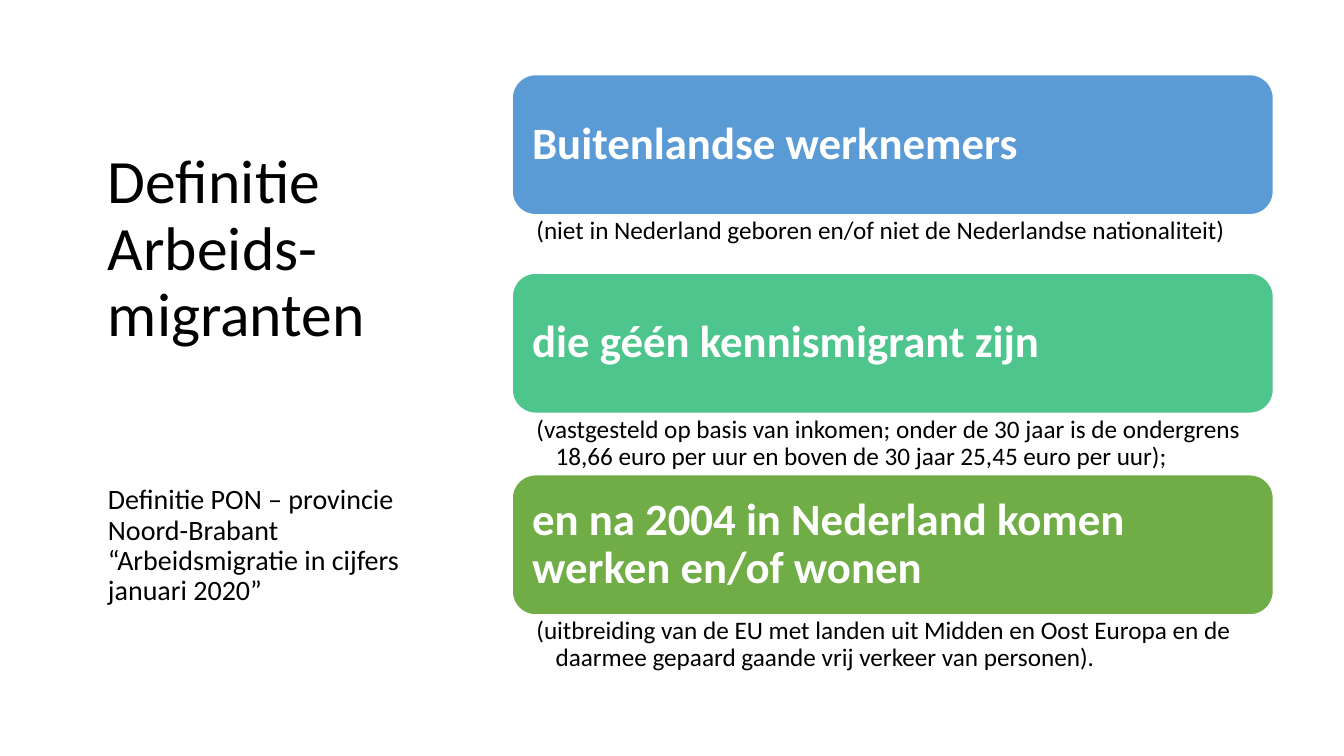
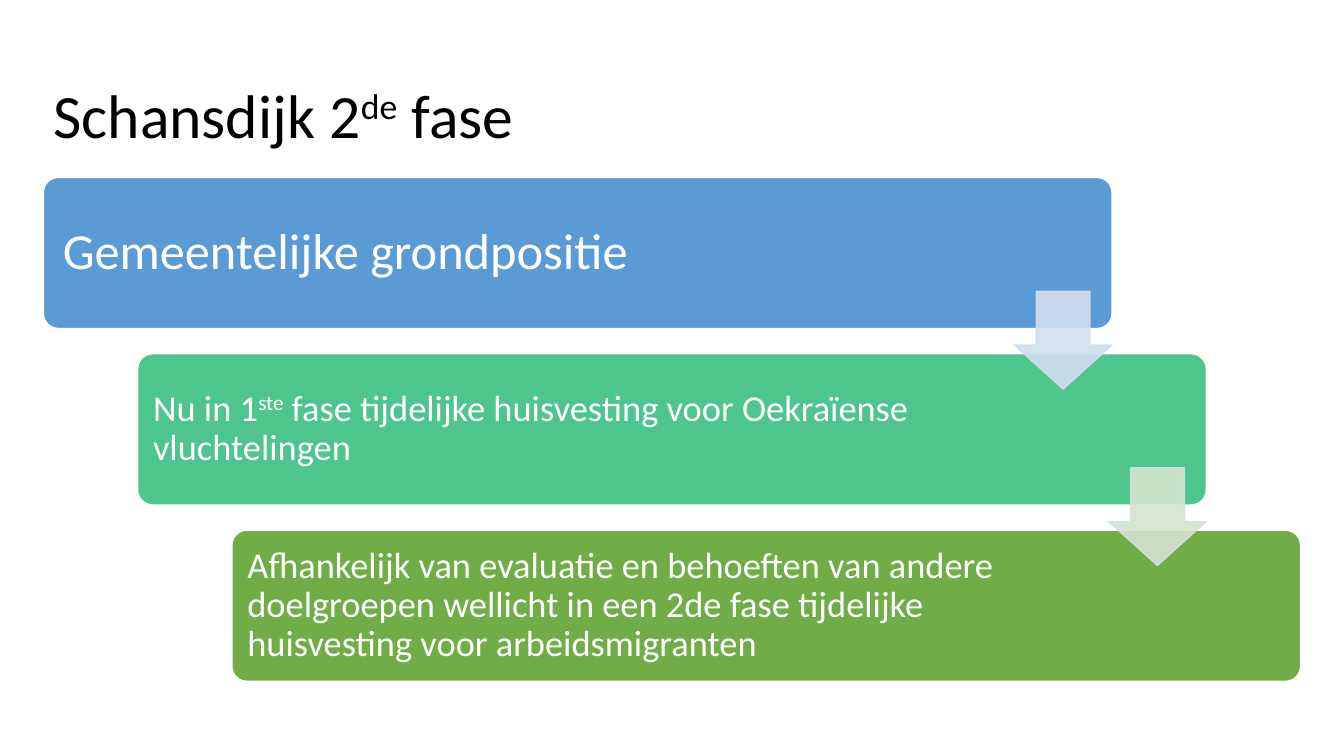
from lxml.etree import SubElement
from pptx import Presentation
from pptx.dml.color import RGBColor
from pptx.enum.shapes import MSO_SHAPE
from pptx.enum.text import MSO_ANCHOR, MSO_AUTO_SIZE, PP_ALIGN
from pptx.oxml.ns import qn
from pptx.util import Inches, Pt

FONT = "Calibri"
BLACK, WHITE, PALE = "000000", "FFFFFF", "D2DEEF"
COLORS = ["5B9BD5", "4DC58D", "70AD47"]
TINTS = [PALE, "D5E3CF"]
PAD = (0.1, 0.05, 0.1, 0.05)
NOTE_PAD = (0.24, 0.03, 0.14, 0.03)

# A paragraph is a list of (text, raised) runs.
HEAD = [("Definitie Arbeids-migranten", False)]
SOURCE = [("Definitie PON – provincie Noord-Brabant “Arbeidsmigratie in cijfers januari 2020”", False)]
TERMS = [  # top, heading, note
    (0.74, "Buitenlandse werknemers",
     "(niet in Nederland geboren en/of niet de Nederlandse nationaliteit)"),
    (2.71, "die géén kennismigrant zijn",
     "(vastgesteld op basis van inkomen; onder de 30 jaar is de ondergrens "
     "18,66 euro per uur en boven de 30 jaar 25,45 euro per uur);"),
    (4.71, "en na 2004 in Nederland komen werken en/of wonen",
     "(uitbreiding van de EU met landen uit Midden en Oost Europa en de "
     "daarmee gepaard gaande vrij verkeer van personen)."),
]
PHASE = [("Schansdijk 2", False), ("de", True), (" fase", False)]
STEPS = [  # runs, size, inset, right inset
    ([("Gemeentelijke grondpositie", False)], 36, 0.15, 1.68),
    ([("Nu in 1", False), ("ste", True),
      (" fase tijdelijke huisvesting voor Oekraïense vluchtelingen", False)], 26, 0.11, 2.01),
    ([("Afhankelijk van evaluatie en behoeften van andere doelgroepen wellicht in een "
       "2de fase tijdelijke huisvesting voor arbeidsmigranten", False)], 26, 0.11, 2.01),
]


def rgb(code):
    return RGBColor.from_string(code)


def inches(nums):
    return [Inches(n) for n in nums]


def apply(obj, values):
    for name, value in values.items():
        setattr(obj, name, value)


def set_frame(frame, pad, anchor=MSO_ANCHOR.MIDDLE):
    left, top, right, bottom = inches(pad)
    apply(frame, dict(word_wrap=True, auto_size=MSO_AUTO_SIZE.NONE, vertical_anchor=anchor,
                      margin_left=left, margin_top=top, margin_right=right, margin_bottom=bottom))


def write(para, runs, size, color, bold=False, before=0):
    apply(para, dict(alignment=PP_ALIGN.LEFT, line_spacing=0.9, space_before=Pt(before)))
    for text, raised in runs:
        run = para.add_run()
        run.text = text
        apply(run.font, dict(name=FONT, size=Pt(size), bold=bold))
        run.font.color.rgb = rgb(color)
        if raised:
            run.font._element.set("baseline", "30000")


def add_title(deck, box, runs):
    slide = deck.slides.add_slide(deck.slide_layouts[5])
    title = slide.shapes.title
    apply(title, dict(zip(("left", "top", "width", "height"), inches(box))))
    set_frame(title.text_frame, PAD)
    write(title.text_frame.paragraphs[0], runs, 44, BLACK)
    return slide


def add_block(slide, kind, box, fill, edge, adjust=()):
    block = slide.shapes.add_shape(kind, *inches(box))
    block.shadow.inherit = False
    block.fill.solid()
    block.fill.fore_color.rgb = rgb(fill)
    block.line.color.rgb = rgb(edge)
    block.line.width = Pt(1)
    for i, value in enumerate(adjust):
        block.adjustments[i] = value
    return block


def add_note(slide, box, text):
    frame = slide.shapes.add_textbox(*inches(box)).text_frame
    set_frame(frame, NOTE_PAD, MSO_ANCHOR.TOP)
    para = frame.paragraphs[0]
    write(para, [(text, False)], 18, BLACK)
    props = para._p.get_or_add_pPr()
    props.set("marL", str(Inches(0.19)))
    props.set("indent", str(-Inches(0.19)))


def add_arrow(slide, box, fill):
    arrow = add_block(slide, MSO_SHAPE.DOWN_ARROW, box, fill, PALE, (0.55, 0.45))
    for color in arrow._element.spPr.iter(qn("a:srgbClr")):
        SubElement(color, qn("a:alpha"), val="90000")


def build_terms(deck):
    slide = add_title(deck, (0.97, 0.7, 3.74, 6.11), HEAD)
    write(slide.shapes.title.text_frame.add_paragraph(), SOURCE, 20, BLACK, before=97)
    left, width, height = 5.08, 7.55, 1.39
    for (top, text, note), color in zip(TERMS, COLORS):
        block = add_block(slide, MSO_SHAPE.ROUNDED_RECTANGLE, (left, top, width, height), color, WHITE)
        set_frame(block.text_frame, [0.13] * 4)
        write(block.text_frame.paragraphs[0], [(text, False)], 32, WHITE, bold=True)
        add_note(slide, (left, top + height, width, 0.62), note)


def build_steps(deck):
    slide = add_title(deck, (0.43, 0.35, 12.48, 1.65), PHASE)
    width, height, side = 10.6, 1.5, 0.97
    spots = [(0.43 + i * 1.87 / 2, 1.76 + i * 1.75) for i in range(len(STEPS))]
    for (left, top), (runs, size, pad, right), color in zip(spots, STEPS, COLORS):
        block = add_block(slide, MSO_SHAPE.ROUNDED_RECTANGLE, (left, top, width, height),
                          color, WHITE, (0.1,))
        set_frame(block.text_frame, (pad, pad, right, pad))
        write(block.text_frame.paragraphs[0], runs, size, WHITE)
    for (left, top), tint in zip(spots, TINTS):
        add_arrow(slide, (left + width - side, top + 1.13, side, side), tint)


def main():
    deck = Presentation()
    apply(deck, dict(slide_width=Inches(13.33), slide_height=Inches(7.5)))
    build_terms(deck)
    build_steps(deck)
    deck.save("out.pptx")


if __name__ == "__main__":
    main()
